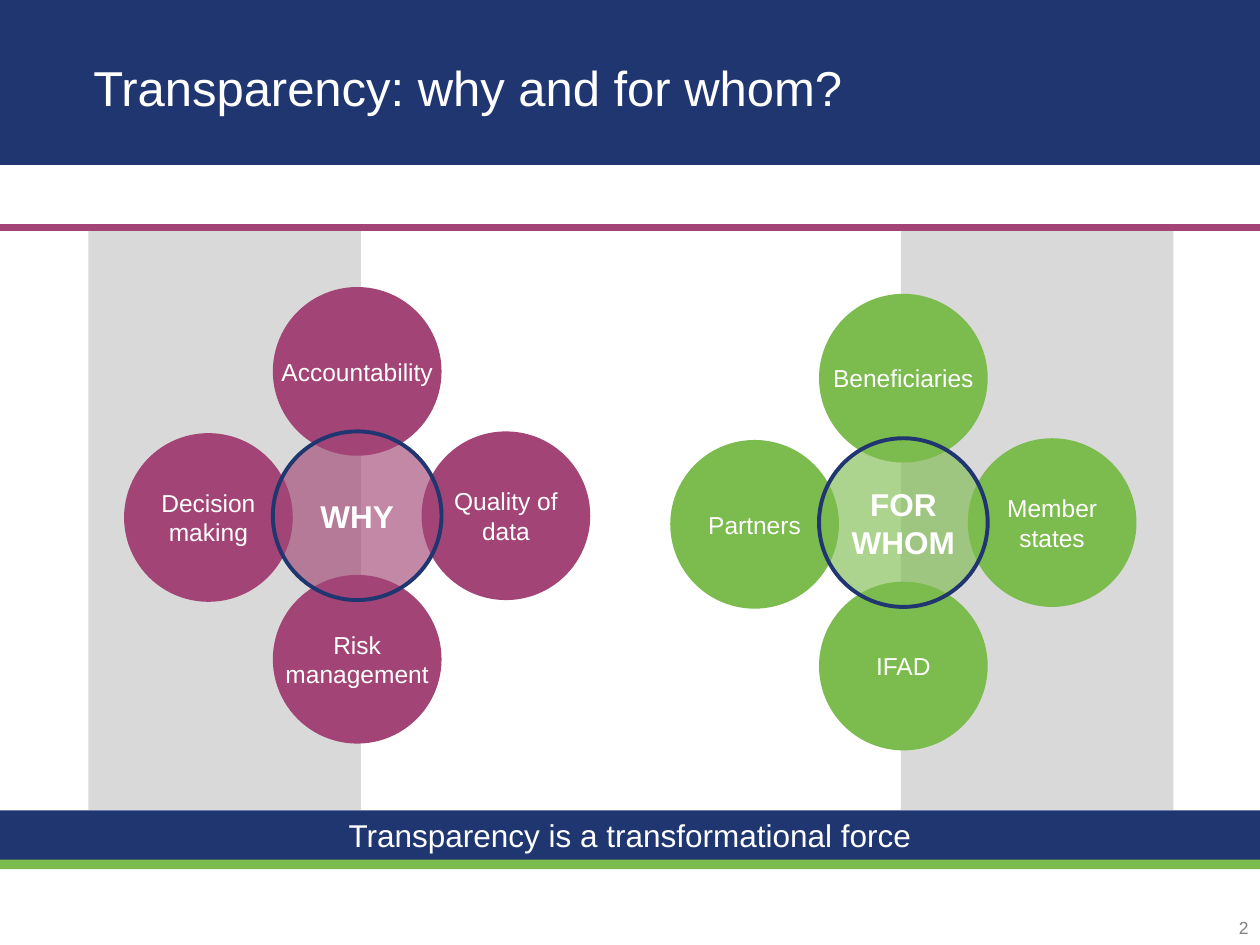
"""Build the slide on why transparency matters and whom it serves."""
from lxml import etree
from pptx import Presentation
from pptx.dml.color import RGBColor
from pptx.enum.shapes import MSO_SHAPE
from pptx.enum.text import MSO_ANCHOR, PP_ALIGN
from pptx.oxml.ns import qn
from pptx.util import Pt

RECTANGLE, OVAL = MSO_SHAPE.RECTANGLE, MSO_SHAPE.OVAL
MIDDLE, BOTTOM = MSO_ANCHOR.MIDDLE, MSO_ANCHOR.BOTTOM
LEFT, CENTER, RIGHT = PP_ALIGN.LEFT, PP_ALIGN.CENTER, PP_ALIGN.RIGHT
COLORS = {
    "navy": "1F3671",
    "plum": "A24475",
    "green": "7CBB4D",
    "panel": "D9D9D9",
    "white": "FFFFFF",
    "number": "808080",
}
DIAMETER = 96.4


def add_filled(shapes, kind, box, color):
    shape = shapes.add_shape(kind, *map(Pt, box))
    shape.shadow.inherit = False
    shape.fill.solid()
    shape.fill.fore_color.rgb = RGBColor.from_string(COLORS[color])
    shape.line.fill.background()
    return shape


def write_text(shape, text, size, align=CENTER, anchor=MIDDLE, inset=4, color="white", bold=False):
    frame = shape.text_frame
    frame.word_wrap = True
    frame.vertical_anchor = anchor
    frame.margin_left = frame.margin_right = Pt(inset)
    frame.margin_top = frame.margin_bottom = 0
    paragraph = frame.paragraphs[0]
    paragraph.alignment = align
    run = paragraph.add_run()
    run.text = text
    run.font.name = "Arial"
    run.font.size = Pt(size)
    run.font.bold = bold
    run.font.color.rgb = RGBColor.from_string(COLORS[color])


presentation = Presentation()
presentation.slide_width, presentation.slide_height = Pt(720), Pt(540)
slide = presentation.slides.add_slide(presentation.slide_layouts[5])

bands = [
    ((0, 0, 720, 94.3), "navy"),
    ((514.8, 130, 155.8, 333), "panel"),
    ((50.5, 130, 155.8, 333), "panel"),
    ((0, 491, 720, 5.7), "green"),
    ((0, 128, 720, 4), "plum"),
]
for box, color in bands:
    add_filled(slide.shapes, RECTANGLE, box, color)

title = slide.shapes.title
title.left, title.top, title.width, title.height = Pt(53.3), Pt(32), Pt(630), Pt(34.5)
write_text(title, "Transparency: why and for whom?", 28, LEFT, BOTTOM, inset=0)
title._element.getparent().append(title._element)

message = add_filled(slide.shapes, RECTANGLE, (0, 463, 720, 28.2), "navy")
write_text(message, "Transparency is a transformational force", 18)

offsets = [(0, -82.5), (85, 0), (-85, 1), (0, 82), (0, 0)]
clusters = [
    (155.9, 246.5, "plum",
     ["Accountability", "Quality of data", "Decision making", "Risk management", "WHY"]),
    (468, 250.4, "green",
     ["Beneficiaries", "Member states", "Partners", "IFAD", "FOR WHOM"]),
]
for center_left, center_top, color, labels in clusters:
    group = slide.shapes.add_group_shape()
    for (across, down), label in zip(offsets, labels):
        box = (center_left + across, center_top + down, DIAMETER, DIAMETER)
        circle = add_filled(group.shapes, OVAL, box, color)
        is_center = label == labels[-1]
        if is_center:
            circle.line.color.rgb = RGBColor.from_string(COLORS["navy"])
            circle.line.width = Pt(2.25)
            fill_color = circle._element.spPr.find(qn("a:solidFill"))[0]
            etree.SubElement(fill_color, qn("a:alpha"), val="63000")
        caption = group.shapes.add_textbox(*map(Pt, box))
        write_text(caption, label, 18 if is_center else 14, bold=is_center)

number = slide.shapes.add_textbox(Pt(692.6), Pt(520), Pt(28), Pt(20))
write_text(number, "2", 10, RIGHT, inset=7.2, color="number")

presentation.save("out.pptx")
